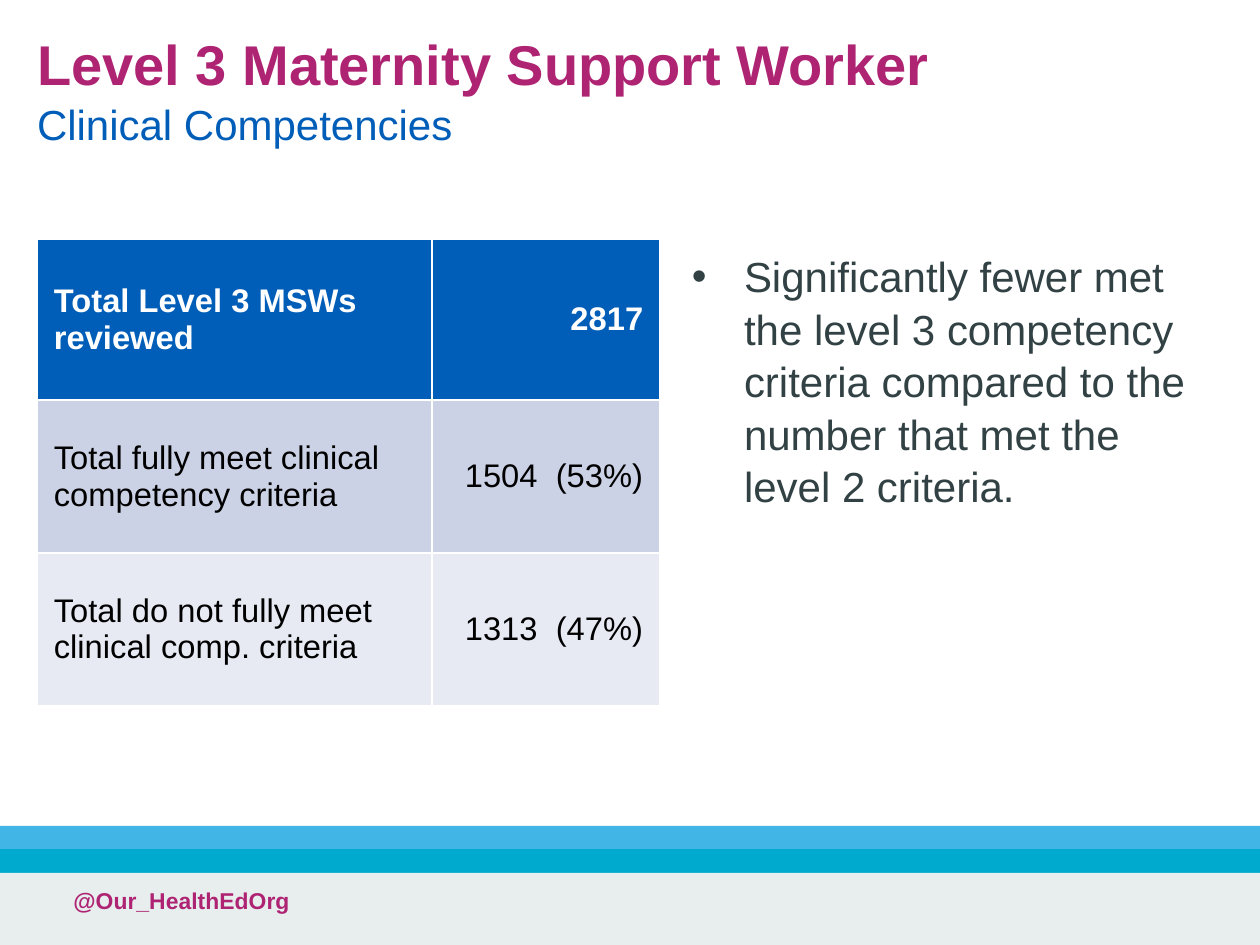
"""Build the slide on Level 3 clinical competencies."""
import pptx
import pptx.dml.color
import pptx.enum.shapes
import pptx.enum.text
import pptx.oxml
import pptx.oxml.ns
import pptx.util

Cm = pptx.util.Cm
Pt = pptx.util.Pt
ALIGN = pptx.enum.text.PP_ALIGN
ANCHOR = pptx.enum.text.MSO_ANCHOR

HUES = {
    "pink": "AE2473", "blue": "005EB8", "sky": "41B6E6", "teal": "00A9CE",
    "mist": "E8EDEE", "slate": "324144", "white": "FFFFFF", "black": "000000",
    "band": "CCD2E6", "pale": "E7EAF3",
}
WIDE, HIGH = 19.05, 14.29
LEFT, TOP = 0.56, 3.61
TITLE = ("Level 3 Maternity Support Worker", "Clinical Competencies")
POINT = ("Significantly fewer met the level 3 competency criteria compared "
         "to the number that met the level 2 criteria.")
HANDLE = "@Our_HealthEdOrg"
ROWS = [
    ("Total Level 3 MSWs reviewed", "2817", "blue"),
    ("Total fully meet clinical competency criteria", "1504  (53%)", "band"),
    ("Total do not fully meet clinical comp. criteria", "1313  (47%)", "pale"),
]
COLS = (5.97, 3.45)
TALL = (2.44, 2.31, 2.31)
BARS = [("sky", 0.35), ("teal", 0.36), ("mist", 1.09)]


def tint(name):
    return pptx.dml.color.RGBColor.from_string(HUES[name])


def paint(fill, name):
    fill.solid()
    fill.fore_color.rgb = tint(name)


def write(para, text, size, hue, bold=False):
    run = para.add_run()
    run.text = text
    font = run.font
    font.name, font.size, font.bold = "Arial", Pt(size), bold
    font.color.rgb = tint(hue)


def add_box(slide, *place):
    frame = slide.shapes.add_textbox(*map(Cm, place)).text_frame
    frame.word_wrap = True
    return frame.paragraphs[0]


def add_bars(slide):
    top = HIGH - sum(high for _, high in BARS)
    for hue, high in BARS:
        bar = slide.shapes.add_shape(
            pptx.enum.shapes.MSO_SHAPE.RECTANGLE,
            0, Cm(top), Cm(WIDE), Cm(high))
        bar.shadow.inherit = False
        paint(bar.fill, hue)
        bar.line.fill.background()
        top += high


def add_title(slide):
    title = slide.shapes.title
    title.left, title.top, title.width, title.height = map(
        Cm, (LEFT, 0.41, 17.04, 2.06))
    frame = title.text_frame
    frame.margin_left = frame.margin_right = 0
    frame.margin_top = frame.margin_bottom = 0
    frame.word_wrap = True
    frame.auto_size = pptx.enum.text.MSO_AUTO_SIZE.NONE
    frame.vertical_anchor = ANCHOR.TOP
    para = frame.paragraphs[0]
    para.alignment = ALIGN.LEFT
    para.line_spacing = 1.04
    write(para, TITLE[0], 24, "pink", True)
    para.add_line_break()
    write(para, TITLE[1], 18, "blue")


def add_point(slide):
    para = add_box(slide, 10.21, TOP + 0.03, 8.28, 4.11)
    para.line_spacing = 1.04
    props = para._p.get_or_add_pPr()
    props.set("marL", str(Cm(0.79)))
    props.set("indent", str(-Cm(0.79)))
    for tag, key, mark in (("buFont", "typeface", "Arial"),
                           ("buChar", "char", "•")):
        node = pptx.oxml.parse_xml(
            f'<a:{tag} {pptx.oxml.ns.nsdecls("a")} {key}="{mark}"/>')
        props.append(node)
    write(para, POINT, 18, "slate")


def edge(cell):
    props = cell._tc.get_or_add_tcPr()
    for side in "LRTB":
        props.append(pptx.oxml.parse_xml(
            f'<a:ln{side} {pptx.oxml.ns.nsdecls("a")} w="{Pt(1)}">'
            f'<a:solidFill><a:srgbClr val="{HUES["white"]}"/></a:solidFill>'
            f'</a:ln{side}>'))


def add_grid(slide):
    grid = slide.shapes.add_table(
        len(ROWS), len(COLS), Cm(LEFT), Cm(TOP),
        Cm(sum(COLS)), Cm(sum(TALL))).table
    for col, wide in zip(grid.columns, COLS):
        col.width = Cm(wide)
    for row, high, (label, count, hue) in zip(grid.rows, TALL, ROWS):
        row.height = Cm(high)
        head = hue == "blue"
        sides = (ALIGN.LEFT, ALIGN.RIGHT)
        for cell, text, side in zip(row.cells, (label, count), sides):
            edge(cell)
            paint(cell.fill, hue)
            cell.vertical_anchor = ANCHOR.MIDDLE
            para = cell.text_frame.paragraphs[0]
            para.alignment = side
            write(para, text, 14, "white" if head else "black", head)


def main():
    deck = pptx.Presentation()
    deck.slide_width, deck.slide_height = Cm(WIDE), Cm(HIGH)
    slide = deck.slides.add_slide(deck.slide_layouts[5])
    add_bars(slide)
    write(add_box(slide, 0.86, 13.28, 11.13, 1.01), HANDLE, 9.8, "pink", True)
    add_title(slide)
    add_point(slide)
    add_grid(slide)
    deck.save("out.pptx")


if __name__ == "__main__":
    main()
